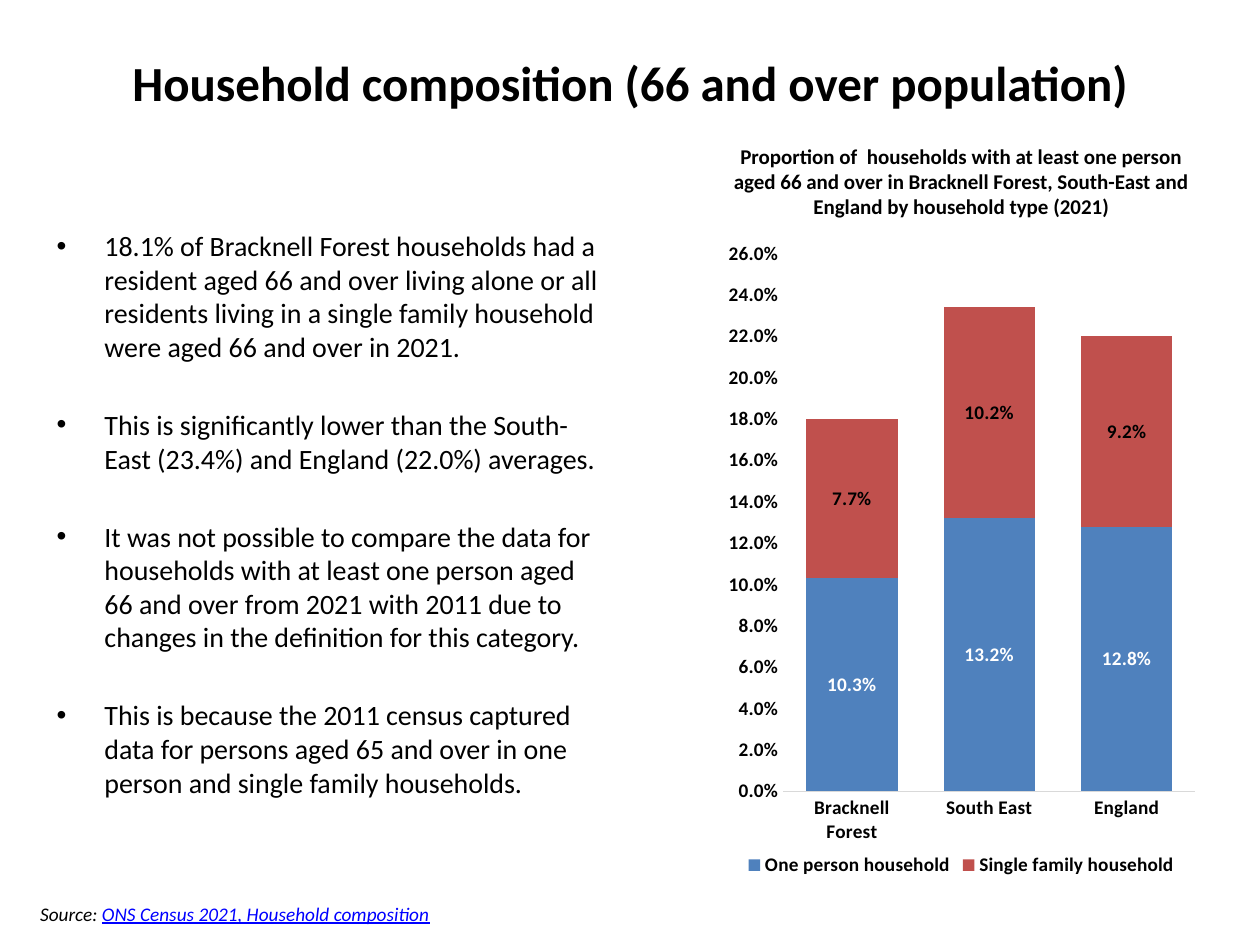
from lxml import etree
from pptx import Presentation
from pptx.chart.data import CategoryChartData
from pptx.dml.color import RGBColor
from pptx.enum.chart import XL_CHART_TYPE, XL_LABEL_POSITION, XL_LEGEND_POSITION, XL_TICK_MARK
from pptx.enum.text import MSO_ANCHOR, PP_ALIGN
from pptx.oxml import parse_xml
from pptx.oxml.ns import nsdecls, qn
from pptx.util import Pt

COLUMN_STACKED = XL_CHART_TYPE.COLUMN_STACKED
LABEL_CENTER = XL_LABEL_POSITION.CENTER
LEGEND_BOTTOM = XL_LEGEND_POSITION.BOTTOM
NO_TICK = XL_TICK_MARK.NONE
TOP, MIDDLE = MSO_ANCHOR.TOP, MSO_ANCHOR.MIDDLE
LEFT, CENTER = PP_ALIGN.LEFT, PP_ALIGN.CENTER

BLACK, WHITE, LINK_BLUE, AXIS_GREY = "000000", "FFFFFF", "0000FF", "D9D9D9"
PERCENT = "0.0%"

BULLETS = [
    "18.1% of Bracknell Forest households had a resident aged 66 and over living alone "
    "or all residents living in a single family household were aged 66 and over in 2021.",
    "This is significantly lower than the South-East (23.4%) and England (22.0%) averages.",
    "It was not possible to compare the data for households with at least one person aged "
    "66 and over from 2021 with 2011 due to changes in the definition for this category.",
    "This is because the 2011 census captured data for persons aged 65 and over in one "
    "person and single family households.",
]
AREAS = ["Bracknell Forest", "South East", "England"]
# name, values, fill colour, label colour
HOUSEHOLDS = [
    ("One person household", (0.103, 0.132, 0.128), "4F81BD", WHITE),
    ("Single family household", (0.077, 0.102, 0.092), "C0504D", BLACK),
]


def rgb(color):
    return RGBColor.from_string(color)


class SlideBuilder:
    """Holds the text style and the slide being filled."""

    font_name = "Calibri"

    def __init__(self, slide):
        self.slide = slide

    def style(self, font, size, color=BLACK, bold=False, italic=False):
        font.name = self.font_name
        font.size = Pt(size)
        font.color.rgb = rgb(color)
        font.bold = bold
        font.italic = italic

    def text(self, box, paragraphs, size, align=LEFT, anchor=TOP, **style):
        sp = self.slide.shapes.add_textbox(*map(Pt, box))
        tf = sp.text_frame
        tf.word_wrap = True
        tf.vertical_anchor = anchor
        for i, text in enumerate(paragraphs):
            p = tf.add_paragraph() if i else tf.paragraphs[0]
            p.text = text
            p.alignment = align
            self.style(p.runs[0].font, size, **style)
        return tf

    def bullets(self, box, items, size, indent, gap, margin_top):
        tf = self.text(box, items, size)
        tf.margin_top = Pt(margin_top)
        for i, p in enumerate(tf.paragraphs):
            pPr = p._p.get_or_add_pPr()
            pPr.set("marL", str(Pt(indent)))
            pPr.set("indent", str(-Pt(indent)))
            etree.SubElement(pPr, qn("a:buFont"), typeface="Arial")
            etree.SubElement(pPr, qn("a:buChar"), char="•")
            if i:
                p.space_before = Pt(gap)

    def source(self, box, lead, reference, size):
        p = self.text(box, [lead], size, italic=True).paragraphs[0]
        r = p.add_run()
        r.text = reference
        self.style(r.font, size, LINK_BLUE, italic=True)
        r.font.underline = True

    def stacked_columns(self, box, categories, series, size, plot_area):
        data = CategoryChartData(number_format=PERCENT)
        data.categories = categories
        for name, values, _, _ in series:
            data.add_series(name, values)
        chart = self.slide.shapes.add_chart(COLUMN_STACKED, *map(Pt, box), data).chart
        self.style(chart.font, size)
        chart.has_title = False
        chart.has_legend = True
        chart.legend.position = LEGEND_BOTTOM
        chart.legend.include_in_layout = False
        self.style(chart.legend.font, size, bold=True)

        plot = chart.plots[0]
        plot.gap_width = 50
        plot.overlap = 100
        plot.vary_by_categories = False
        for s, (_, _, fill, label_color) in zip(plot.series, series):
            s.format.fill.solid()
            s.format.fill.fore_color.rgb = rgb(fill)
            labels = s.data_labels
            labels.show_value = True
            labels.position = LABEL_CENTER
            labels.number_format = PERCENT
            labels.number_format_is_linked = False
            self.style(labels.font, size, label_color, bold=True)

        for axis in (chart.category_axis, chart.value_axis):
            axis.major_tick_mark = axis.minor_tick_mark = NO_TICK
            axis.has_major_gridlines = False
            self.style(axis.tick_labels.font, size, bold=True)
        line = chart.category_axis.format.line
        line.color.rgb = rgb(AXIS_GREY)
        line.width = Pt(0.75)
        values = chart.value_axis
        values.format.line.fill.background()
        values.minimum_scale, values.maximum_scale, values.major_unit = 0, 0.26, 0.02
        values.tick_labels.number_format = PERCENT
        values.tick_labels.number_format_is_linked = False
        self.place_plot(chart, plot_area)

    def place_plot(self, chart, plot_area):
        """Fix the inner plot area as x, y, w, h fractions of the chart."""
        area = chart._chartSpace.chart.plotArea
        for old in area.findall(qn("c:layout")):
            area.remove(old)
        sizes = "".join(f'<c:{k} val="{v}"/>' for k, v in zip("xywh", plot_area))
        area.insert(0, parse_xml(
            f'<c:layout {nsdecls("c")}><c:manualLayout><c:layoutTarget val="inner"/>'
            f'<c:xMode val="edge"/><c:yMode val="edge"/>{sizes}'
            "</c:manualLayout></c:layout>"))


def main():
    prs = Presentation()
    prs.slide_width, prs.slide_height = Pt(720), Pt(540)
    builder = SlideBuilder(prs.slides.add_slide(prs.slide_layouts[6]))

    builder.text((36, 21.6, 648, 50.4), ["Household composition (66 and over population)"],
                 28, CENTER, MIDDLE, bold=True)
    builder.bullets((25.2, 104.4, 324.7, 379.4), BULLETS, 16,
                    indent=27.4, gap=25.4, margin_top=26.3)
    builder.text((403.9, 78.5, 290.9, 51.1),
                 ["Proportion of  households with at least one person aged 66 and over in "
                  "Bracknell Forest, South-East and England by household type (2021)"],
                 12, CENTER, bold=True)
    builder.stacked_columns((403.9, 133.9, 290.9, 370.1), AREAS, HOUSEHOLDS, 11,
                            plot_area=(0.15, 0.03, 0.81, 0.83))
    builder.source((15.8, 511.9, 349.2, 20.9), "Source: ",
                   "ONS Census 2021, Household composition", 11)
    prs.save("out.pptx")


if __name__ == "__main__":
    main()
